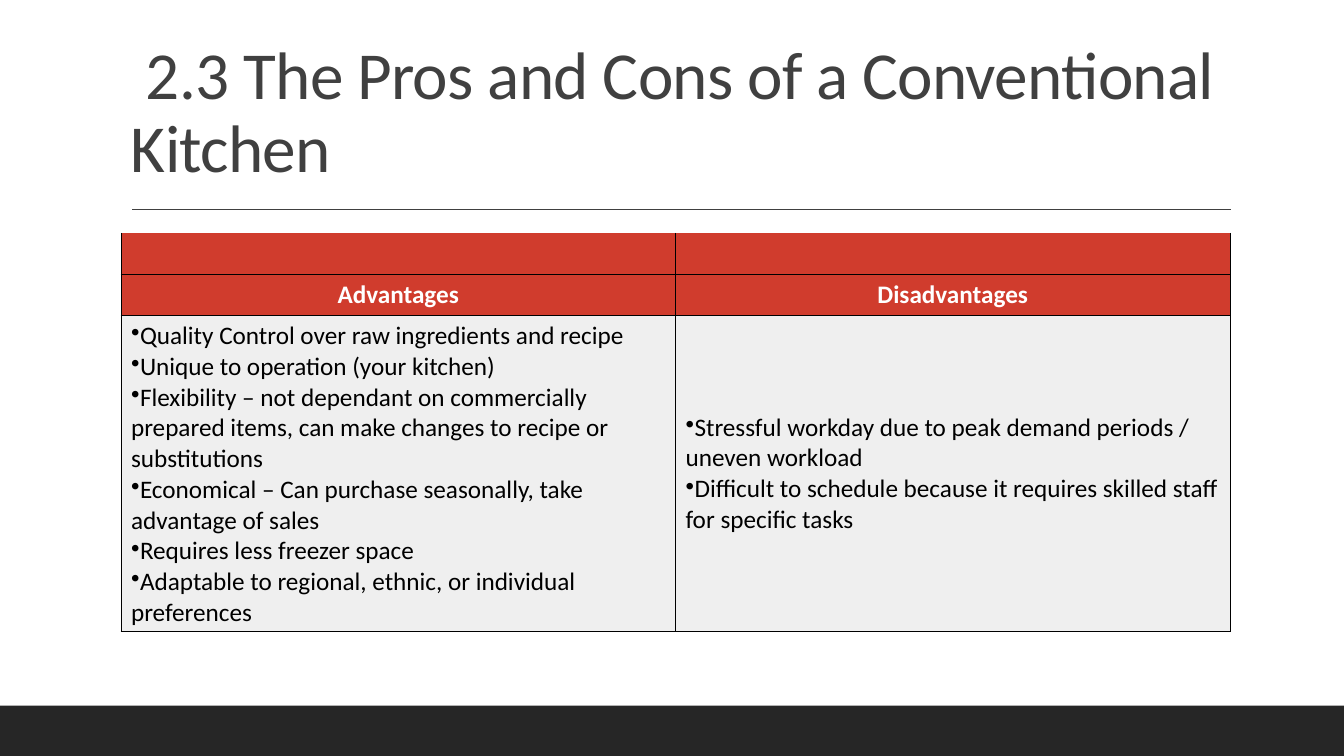
from lxml import etree
from pptx import Presentation
from pptx.dml.color import RGBColor
from pptx.enum import shapes, text
from pptx.oxml import ns
from pptx.util import Inches, Pt

FONT = "Calibri"
COLOURS = {
    "title": "404040", "footer": "262626", "header": "D03C2D", "body": "EFEFEF",
    "light": "FFFFFF", "dark": "000000",
}
TITLE = "2.3 The Pros and Cons of a Conventional Kitchen"
HEADINGS = ["Advantages", "Disadvantages"]
ADVANTAGES = [
    "Quality Control over raw ingredients and recipe",
    "Unique to operation (your kitchen)",
    "Flexibility – not dependant on commercially prepared items, "
    "can make changes to recipe or substitutions",
    "Economical – Can purchase seasonally, take advantage of sales",
    "Requires less freezer space",
    "Adaptable to regional, ethnic, or individual preferences",
]
DISADVANTAGES = [
    "Stressful workday due to peak demand periods / uneven workload",
    "Difficult to schedule because it requires skilled staff for specific tasks",
]
ROW_HEIGHTS = [0.41, 0.41, 3.14]


def colour(name):
    return RGBColor.from_string(COLOURS[name])


def add_xml(parent, tag, **attributes):
    return etree.SubElement(parent, ns.qn(tag), attributes)


def write(frame, lines, size=18, ink="dark", bold=False, align=text.PP_ALIGN.LEFT,
          bullet=None, indent=0, line_spacing=None, tracking=None):
    """Fill a text frame with one paragraph per line; tracking is in points."""
    for number, line in enumerate(lines):
        para = frame.add_paragraph() if number else frame.paragraphs[0]
        para.alignment = align
        if line_spacing:
            para.line_spacing = line_spacing
        properties = para._p.get_or_add_pPr()
        properties.set("marL", "0")
        properties.set("indent", str(Inches(indent)))
        if bullet:
            add_xml(properties, "a:buChar", char=bullet)
        span = para.add_run()
        span.text = line
        span.font.name = FONT
        span.font.size = Pt(size)
        span.font.bold = bold
        span.font.color.rgb = colour(ink)
        if tracking:
            span._r.get_or_add_rPr().set("spc", str(round(tracking * 100)))


def add_footer_band(page):
    band = page.shapes.add_shape(shapes.MSO_SHAPE.RECTANGLE, Inches(0), Inches(7),
                                 Inches(13.33), Inches(0.5))
    band.shadow.inherit = False
    band.fill.solid()
    band.fill.fore_color.rgb = colour("footer")
    band.line.fill.background()


def add_title_rule(page):
    rule = page.shapes.add_connector(shapes.MSO_CONNECTOR.STRAIGHT, Inches(1.31),
                                     Inches(2.08), Inches(12.21), Inches(2.08))
    rule.line.color.rgb = colour("title")
    rule.line.width = Pt(1)
    add_xml(rule._element.spPr, "a:effectLst")


def add_title(page):
    box = page.shapes.add_textbox(Inches(1.2), Inches(0.31), Inches(11), Inches(1.59))
    box.text_frame.word_wrap = True
    box.text_frame.vertical_anchor = text.MSO_ANCHOR.BOTTOM
    write(box.text_frame, [TITLE], size=48, ink="title", indent=0.15,
          line_spacing=0.9, tracking=-0.5)


def style_cell(cell, fill, open_top):
    """Border and fill a cell; borders must precede the fill in the XML."""
    properties = cell._tc.get_or_add_tcPr()
    for side in "LRTB":
        edge = add_xml(properties, f"a:ln{side}", w=str(Pt(0.75)))
        if side == "T" and open_top:
            add_xml(edge, "a:noFill")
        else:
            add_xml(add_xml(edge, "a:solidFill"), "a:srgbClr", val=COLOURS["dark"])
    cell.fill.solid()
    cell.fill.fore_color.rgb = colour(fill)
    cell.vertical_anchor = text.MSO_ANCHOR.MIDDLE


def add_comparison_table(page):
    table = page.shapes.add_table(3, 2, Inches(1.2), Inches(2.31), Inches(11),
                                  Inches(sum(ROW_HEIGHTS))).table
    table.first_row = table.horz_banding = False
    for row_number, height in enumerate(ROW_HEIGHTS):
        table.rows[row_number].height = Inches(height)
        for cell in table.rows[row_number].cells:
            style_cell(cell, "header" if row_number < 2 else "body", row_number == 0)
    for column, points in enumerate([ADVANTAGES, DISADVANTAGES]):
        write(table.cell(1, column).text_frame, [HEADINGS[column]], ink="light",
              bold=True, align=text.PP_ALIGN.CENTER)
        write(table.cell(2, column).text_frame, points, bullet="•")


def main():
    deck = Presentation()
    deck.slide_width, deck.slide_height = Inches(13.33), Inches(7.5)
    page = deck.slides.add_slide(deck.slide_layouts[6])
    add_footer_band(page)
    add_title_rule(page)
    add_title(page)
    add_comparison_table(page)
    deck.save("out.pptx")


if __name__ == "__main__":
    main()
